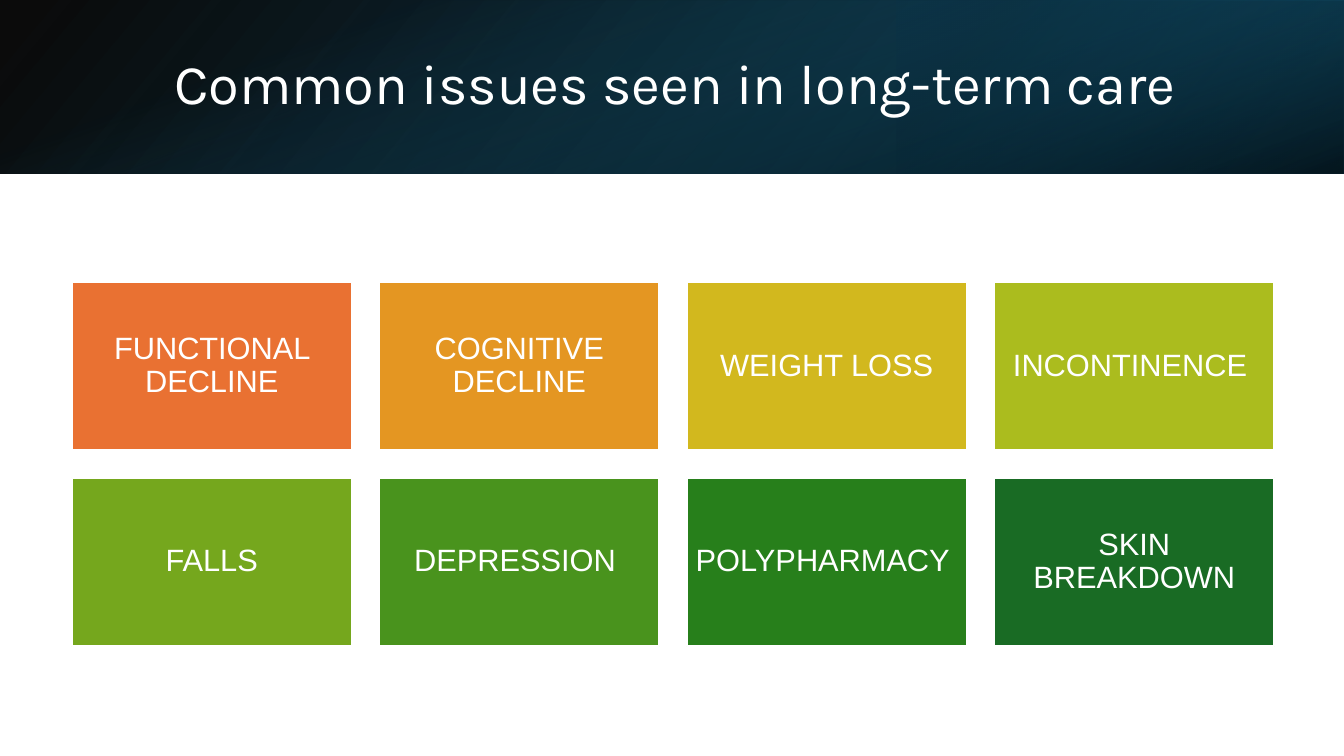
from lxml import etree
from pptx import Presentation
from pptx.dml.color import RGBColor
from pptx.enum.shapes import MSO_SHAPE
from pptx.enum.text import MSO_ANCHOR, PP_ALIGN
from pptx.oxml.ns import qn
from pptx.util import Inches, Pt

RECTANGLE = MSO_SHAPE.RECTANGLE
MIDDLE = MSO_ANCHOR.MIDDLE
LEFT = PP_ALIGN.LEFT
CENTER = PP_ALIGN.CENTER

ISSUES = [
    ("FUNCTIONAL DECLINE", "E97132"),
    ("COGNITIVE DECLINE", "E49622"),
    ("WEIGHT LOSS", "D2B81E"),
    ("INCONTINENCE ", "ABBC1E"),
    ("FALLS", "75A71D"),
    ("DEPRESSION ", "49931D"),
    ("POLYPHARMACY ", "277F1B"),
    ("SKIN BREAKDOWN", "196B24"),
]
COLUMNS = 4
CARD_WIDTH, CARD_HEIGHT = 2.78, 1.67
GRID_LEFT, GRID_TOP = 0.71, 2.8
GAP = 0.27
COLUMN_STEP, ROW_STEP = CARD_WIDTH + GAP, CARD_HEIGHT + GAP


def color(value):
    return RGBColor.from_string(value)


class SlideBuilder:
    title_font = "Karla"
    body_font = "Arial"
    white = "FFFFFF"

    def __init__(self, slide):
        self.slide = slide
        slide.background.fill.solid()
        slide.background.fill.fore_color.rgb = color(self.white)

    def rectangle(self, left, top, width, height):
        shape = self.slide.shapes.add_shape(
            RECTANGLE, Inches(left), Inches(top), Inches(width), Inches(height)
        )
        shape.shadow.inherit = False
        return shape

    def set_text(self, shape, text, font_name, size, alignment):
        frame = shape.text_frame
        frame.word_wrap = True
        frame.vertical_anchor = MIDDLE
        frame.text = text
        paragraph = frame.paragraphs[0]
        paragraph.alignment = alignment
        paragraph.line_spacing = 0.9
        font = paragraph.runs[0].font
        font.name = font_name
        font.size = Pt(size)
        font.color.rgb = color(self.white)

    def gradient_band(self, box, stops, angle, rotation=0, flipped=False):
        shape = self.rectangle(*box)
        shape.rotation = rotation
        shape.line.fill.background()
        if flipped:
            shape._element.spPr.find(qn("a:xfrm")).set("flipH", "1")
        shape.fill.gradient()
        shape.fill.gradient_angle = 360 - angle
        for stop, (position, value, opacity) in zip(shape.fill.gradient_stops, stops):
            stop.position = position / 100
            stop.color.rgb = color(value)
        for element, (position, value, opacity) in zip(
            shape._element.spPr.iter(qn("a:srgbClr")), stops
        ):
            alpha = etree.SubElement(element, qn("a:alpha"))
            alpha.set("val", str(opacity * 1000))

    def title(self, text, left, top, width, height):
        box = self.slide.shapes.add_textbox(
            Inches(left), Inches(top), Inches(width), Inches(height)
        )
        self.set_text(box, text, self.title_font, 40, LEFT)

    def card(self, text, fill, left, top):
        shape = self.rectangle(left, top, CARD_WIDTH, CARD_HEIGHT)
        shape.fill.solid()
        shape.fill.fore_color.rgb = color(fill)
        shape.line.color.rgb = color(self.white)
        shape.line.width = Pt(1.5)
        frame = shape.text_frame
        frame.margin_left = frame.margin_right = Inches(0.09)
        frame.margin_top = frame.margin_bottom = Inches(0.09)
        self.set_text(shape, text, self.body_font, 22, CENTER)


def main():
    presentation = Presentation()
    presentation.slide_width = Inches(13.33)
    presentation.slide_height = Inches(7.5)
    builder = SlideBuilder(presentation.slides.add_slide(presentation.slide_layouts[6]))

    builder.gradient_band(
        (0, 0, 13.33, 1.72),
        [(0, "000000", 96), (100, "104862", 100)],
        angle=140,
        flipped=True,
    )
    builder.gradient_band(
        (8.89, 0, 4.44, 1.72),
        [(19, "0B3041", 68), (100, "156082", 79)],
        angle=320,
        rotation=180,
        flipped=True,
    )
    builder.gradient_band(
        (5.8, -5.8, 1.72, 13.33),
        [(23, "156082", 0), (99, "000000", 74)],
        angle=340,
        rotation=90,
    )
    builder.title(" Common issues seen in long-term care", 1.5, 0.38, 10.98, 0.96)

    for index, (text, fill) in enumerate(ISSUES):
        row, column = divmod(index, COLUMNS)
        builder.card(
            text, fill, GRID_LEFT + column * COLUMN_STEP, GRID_TOP + row * ROW_STEP
        )

    presentation.save("out.pptx")


if __name__ == "__main__":
    main()
